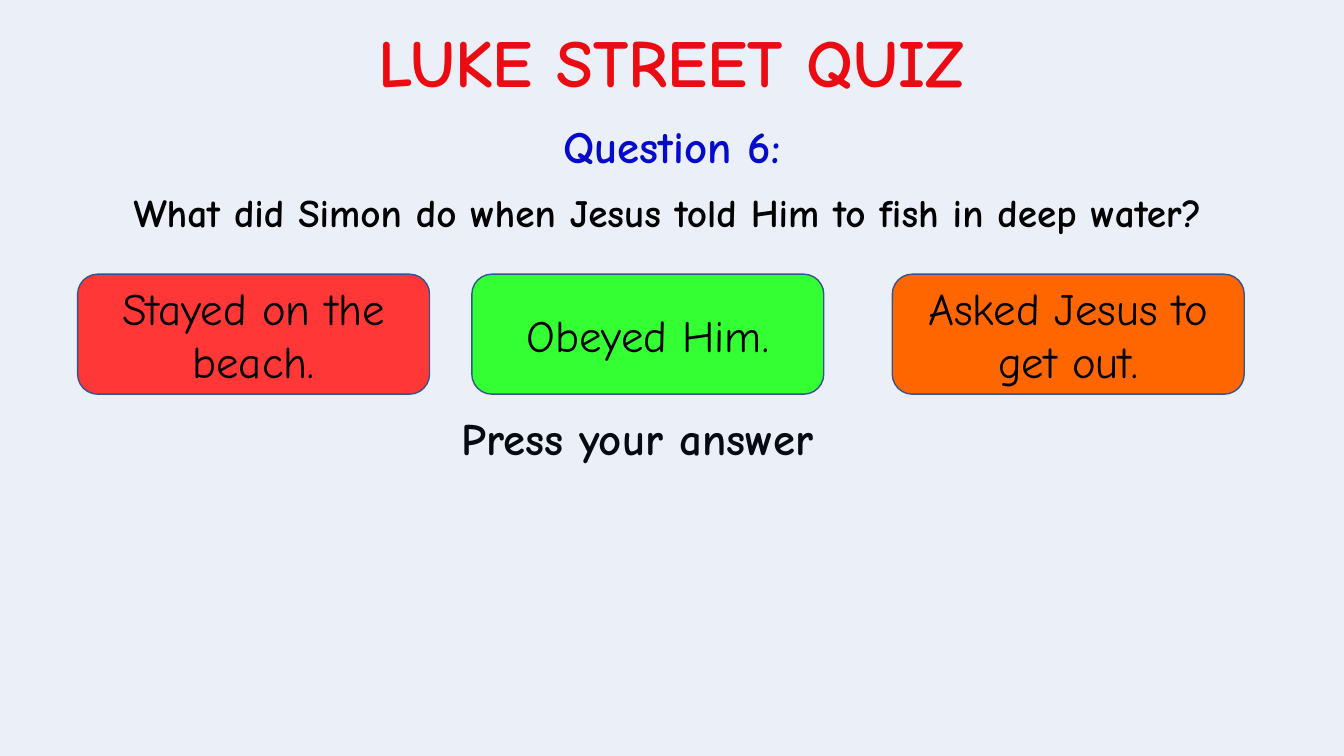
from dataclasses import dataclass

from lxml import etree
from pptx import Presentation
from pptx.dml.color import RGBColor
from pptx.enum.shapes import MSO_SHAPE
from pptx.enum.text import MSO_ANCHOR, PP_ALIGN
from pptx.oxml.ns import qn
from pptx.util import Inches, Pt

RECT, ROUNDED = MSO_SHAPE.RECTANGLE, MSO_SHAPE.ROUNDED_RECTANGLE
LEFT, CENTER = PP_ALIGN.LEFT, PP_ALIGN.CENTER
MIDDLE = MSO_ANCHOR.MIDDLE


@dataclass(frozen=True)
class Theme:
    font: str = "Comic Neue"
    title: str = "FF0000"
    heading: str = "0000CC"
    text: str = "000000"
    tint: str = "4472C4"
    border: str = "325491"
    red: str = "FF3737"
    green: str = "33FF33"
    orange: str = "FF6600"
    title_size: int = 48
    body_size: int = 32
    question_size: int = 28


THEME = Theme()
SLIDE_W, SLIDE_H = 13.33, 7.5


def write(tf, text, size, color, bold=True, align=CENTER, **spacing):
    p = tf.paragraphs[0]
    for name, value in {"alignment": align, **spacing}.items():
        setattr(p, name, value)
    r = p.add_run()
    r.text = text
    for name, value in {"name": THEME.font, "size": Pt(size), "bold": bold}.items():
        setattr(r.font, name, value)
    r.font.color.rgb = RGBColor.from_string(color)


def add_text(s, box, text, size, color, wrap=True, **paragraph):
    tf = s.shapes.add_textbox(*map(Inches, box)).text_frame
    tf.word_wrap = wrap
    write(tf, text, size, color, **paragraph)


def add_filled(s, kind, box, color):
    sp = s.shapes.add_shape(kind, *map(Inches, box))
    sp.shadow.inherit = False
    sp.fill.solid()
    sp.fill.fore_color.rgb = RGBColor.from_string(color)
    return sp


def add_tint(s, box, opacity):
    """Lay a see-through wash of colour over the box."""
    sp = add_filled(s, RECT, box, THEME.tint)
    sp.line.fill.background()
    color = sp.fill._xPr.find(qn("a:solidFill"))[0]
    etree.SubElement(color, qn("a:alpha")).set("val", str(opacity * 1000))


def add_answer(s, box, text, color):
    sp = add_filled(s, ROUNDED, box, color)
    sp.line.color.rgb = RGBColor.from_string(THEME.border)
    sp.line.width = Pt(1)
    tf = sp.text_frame
    tf.word_wrap = True
    tf.vertical_anchor = MIDDLE
    write(tf, text, THEME.body_size, THEME.text, bold=False)


def add_answers(s, box, answers):
    """Place answers in a row; each has its own offset from the box's left."""
    left, top, width, height = box
    for offset, text, color in answers:
        add_answer(s, (left + offset, top, width, height), text, color)


def add_quiz_slide(prs, title, number, question, answers, prompt):
    s = prs.slides.add_slide(prs.slide_layouts[6])
    add_text(s, (3.12, 0.15, 7.08, 0.91), title, THEME.title_size, THEME.title,
             wrap=False)
    add_text(s, (4.48, 4.09, 6.73, 0.72), prompt, THEME.body_size, THEME.text,
             align=LEFT, line_spacing=0.9, space_before=Pt(7.5))
    add_text(s, (4.46, 1.13, 4.41, 0.64), f"Question {number}:",
             THEME.body_size, THEME.heading)
    add_tint(s, (0, 0, SLIDE_W, SLIDE_H), opacity=10)
    add_answers(s, (0.77, 2.72, 3.49, 1.19), answers)
    add_text(s, (0.42, 1.79, 12.4, 1.19), question, THEME.question_size, THEME.text,
             line_spacing=Pt(36), space_before=Pt(10))


def main():
    prs = Presentation()
    prs.slide_width, prs.slide_height = Inches(SLIDE_W), Inches(SLIDE_H)
    add_quiz_slide(
        prs,
        title="LUKE STREET QUIZ",
        number=6,
        question="What did Simon do when Jesus told Him to fish in deep water?",
        answers=[
            (0, "Stayed on the beach.", THEME.red),
            (3.91, "Obeyed Him.", THEME.green),
            (8.08, "Asked Jesus to get out.", THEME.orange),
        ],
        prompt="Press your answer",
    )
    prs.save("out.pptx")


if __name__ == "__main__":
    main()
